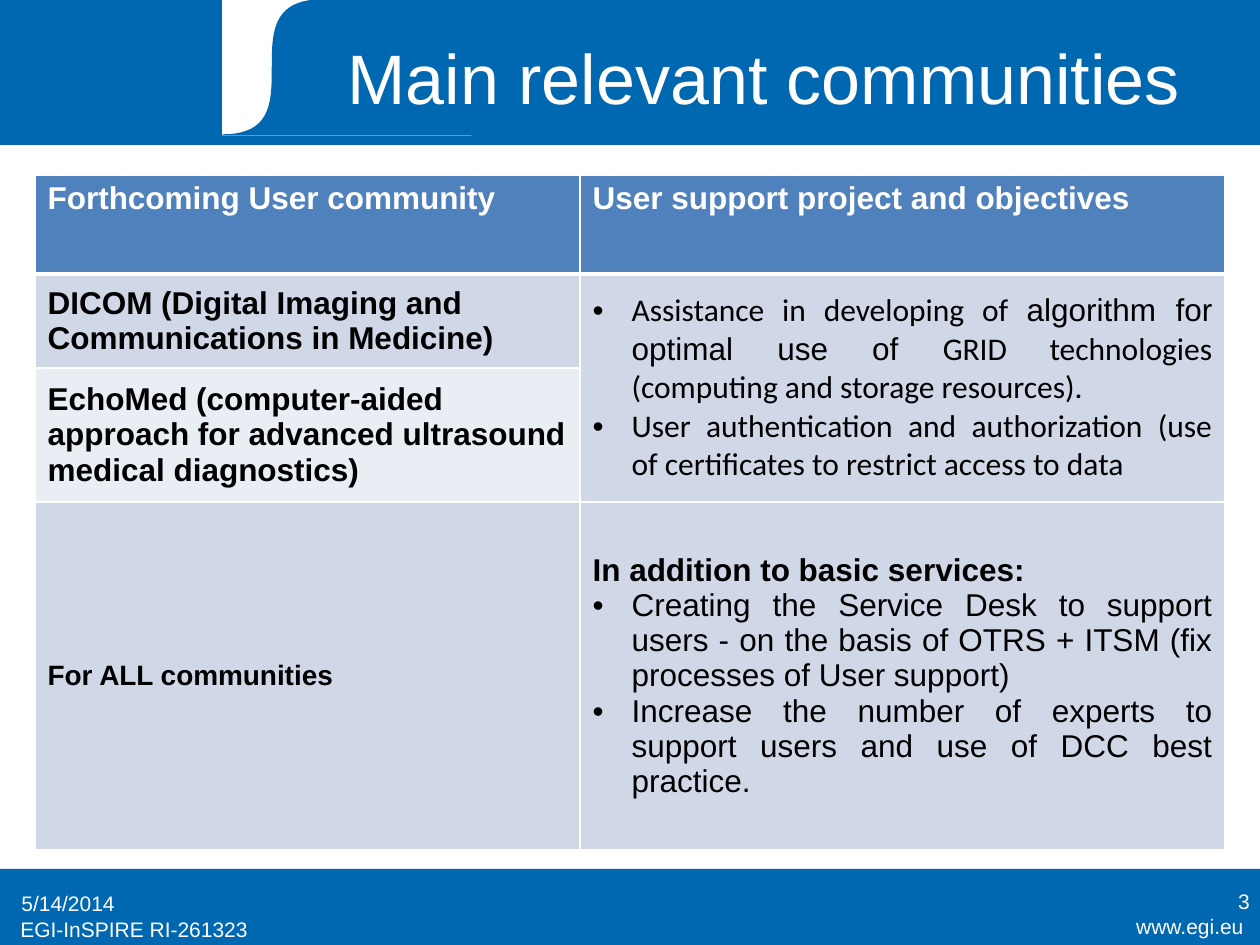
from dataclasses import dataclass

from lxml import etree
from pptx import Presentation, util as u
from pptx.dml.color import RGBColor
from pptx.enum import shapes, text
from pptx.oxml.ns import qn


@dataclass(frozen=True)
class Theme:
    """Colours, fonts and type sizes of the slide."""
    blue: str = "0067B1"
    white: str = "FFFFFF"
    black: str = "000000"
    head: str = "4F81BD"
    band: str = "D0D8E8"
    pale: str = "E9EDF4"
    sans: str = "Arial"
    alt: str = "Calibri"
    title: int = 40
    body: int = 18
    label: int = 16
    foot: int = 12


T = Theme()
LEFT, MID, RIGHT, FULL = (text.PP_ALIGN.LEFT, text.PP_ALIGN.CENTER,
                          text.PP_ALIGN.RIGHT, text.PP_ALIGN.JUSTIFY)
TOP, CENTRE = text.MSO_ANCHOR.TOP, text.MSO_ANCHOR.MIDDLE


def px(n):
    """Turn pixels into EMU."""
    return u.Emu(round(n * 914400 / 126))


def rgb(tone):
    """Turn a hex string into a colour."""
    return RGBColor.from_string(tone)


def write(para, words, size=T.body, face=T.sans, tone=T.white,
          bold=False, align=LEFT, bullet=False):
    """Fill a paragraph with a string or with (string, face) runs."""
    para.alignment = align
    if bullet:
        props = para._p.get_or_add_pPr()
        props.set("marL", str(px(39)))
        props.set("indent", str(-px(39)))
        etree.SubElement(props, qn("a:buFont")).set("typeface", T.sans)
        etree.SubElement(props, qn("a:buChar")).set("char", "•")
    for part, font in [(words, face)] if isinstance(words, str) else words:
        run = para.add_run()
        run.text = part
        run.font.size, run.font.name, run.font.bold = u.Pt(size), font, bold
        run.font.color.rgb = rgb(tone)


def label(slide, box, words, anchor=CENTRE, **form):
    """Add a text box with one paragraph."""
    frame = slide.shapes.add_textbox(*map(px, box)).text_frame
    frame.word_wrap = True
    frame.vertical_anchor = anchor
    write(frame.paragraphs[0], words, **form)


def paint(shape, tone, line=True):
    """Give a shape a flat fill and a matching thin outline."""
    shape.shadow.inherit = False
    shape.fill.solid()
    shape.fill.fore_color.rgb = rgb(tone)
    if line:
        shape.line.color.rgb = rgb(tone)
        shape.line.width = u.Pt(0.75)
    else:
        shape.line.fill.background()


def bar(slide, box, tone, line=True):
    """Add a plain rectangle."""
    kind = shapes.MSO_SHAPE.RECTANGLE
    paint(slide.shapes.add_shape(kind, *map(px, box)), tone, line)


def swoosh(slide, left, right, low, bend, steps=40):
    """Add the blue panel whose left edge is an S curve."""
    curve = []
    for step in range(1, steps + 1):
        t = step / steps
        s = 1 - t
        x = left + bend * (3 * s * s * t + t ** 3)
        y = low * (s ** 3 + 3 * s * s * t)
        curve.append((px(x), px(y)))
    pen = slide.shapes.build_freeform(px(right), 0)
    pen.add_line_segments([(px(right), px(low)), (px(left), px(low))] + curve)
    paint(pen.convert_to_shape(), T.blue)


def edge(cell, **widths):
    """Draw white cell borders, widths in points by side."""
    props = cell._tc.get_or_add_tcPr()
    for side in "LRTB":
        line = etree.SubElement(props, qn("a:ln" + side))
        line.set("w", str(u.Pt(widths.get(side, 1))))
        fill = etree.SubElement(line, qn("a:solidFill"))
        etree.SubElement(fill, qn("a:srgbClr")).set("val", T.white)


def fill(cell, tone, paras, anchor=CENTRE):
    """Colour a cell and write its paragraphs."""
    cell.fill.solid()
    cell.fill.fore_color.rgb = rgb(tone)
    cell.vertical_anchor = anchor
    frame = cell.text_frame
    for i, (words, form) in enumerate(paras):
        para = frame.add_paragraph() if i else frame.paragraphs[0]
        write(para, words, **form)


def grid(slide, box, cols, rows, cells):
    """Add the table of communities."""
    table = slide.shapes.add_table(len(rows), len(cols), *map(px, box)).table
    table.first_row = table.horz_banding = False
    for col, wide in zip(table.columns, cols):
        col.width = px(wide)
    for row, tall in zip(table.rows, rows):
        row.height = px(tall)
    for r in range(len(rows)):
        for c in range(len(cols)):
            edge(table.cell(r, c), **{0: {"B": 3}, 1: {"T": 3}}.get(r, {}))
    table.cell(1, 1).merge(table.cell(2, 1))
    for (r, c), (tone, anchor, paras) in cells.items():
        fill(table.cell(r, c), tone, paras, anchor)


def main():
    """Build and save the slide."""
    deck = Presentation()
    deck.slide_width, deck.slide_height = px(1260), px(945)
    slide = deck.slides.add_slide(deck.slide_layouts[6])

    bar(slide, (0, 869, 1260, 76), T.blue, line=False)
    bar(slide, (0, 0, 1260, 144), T.blue)
    bar(slide, (223, 0, 248, 135), T.white)
    swoosh(slide, 223, 474, 135, 99)

    label(slide, (1057, 907, 199, 39), "www.egi.eu", TOP,
          size=T.foot, align=RIGHT)
    label(slide, (8, 910, 315, 39), "EGI-InSPIRE RI-261323", TOP, size=T.foot)
    label(slide, (292, 16, 943, 120), "Main relevant communities",
          size=T.title, align=MID)
    label(slide, (9, 878, 294, 50), "5/14/2014", size=T.foot)
    label(slide, (968, 876, 294, 50), "3", size=T.foot, align=RIGHT)

    head = dict(bold=True)
    name = dict(bold=True, tone=T.black)
    item = dict(tone=T.black, align=FULL, bullet=True)
    aid = [("Assistance in developing of ", T.alt),
           ("algorithm for optimal use of ", T.sans),
           ("GRID technologies (computing and storage resources).", T.alt)]
    access = ("User authentication and authorization (use of certificates "
              "to restrict access to data")
    desk = ("Creating the Service Desk to support users - on the basis of "
            "OTRS + ITSM (fix processes of User support)")
    experts = ("Increase the number of experts to support users and use of "
               "DCC best practice.")
    cells = {
        (0, 0): (T.head, TOP, [("Forthcoming User community", head)]),
        (0, 1): (T.head, TOP, [("User support project and objectives", head)]),
        (1, 0): (T.band, CENTRE, [
            ("DICOM (Digital Imaging and Communications in Medicine)", name)]),
        (1, 1): (T.band, CENTRE, [
            (aid, item), (access, dict(item, face=T.alt))]),
        (2, 0): (T.pale, CENTRE, [
            ("EchoMed (computer-aided approach for advanced ultrasound "
             "medical diagnostics)", name)]),
        (3, 0): (T.band, CENTRE, [
            ("For ALL communities", dict(name, size=T.label))]),
        (3, 1): (T.band, CENTRE, [
            ("In addition to basic services:", name),
            (desk, item), (experts, item)]),
    }
    grid(slide, (35, 175, 1190, 675), (545, 645), (99, 94, 134, 348), cells)
    deck.save("out.pptx")


if __name__ == "__main__":
    main()
